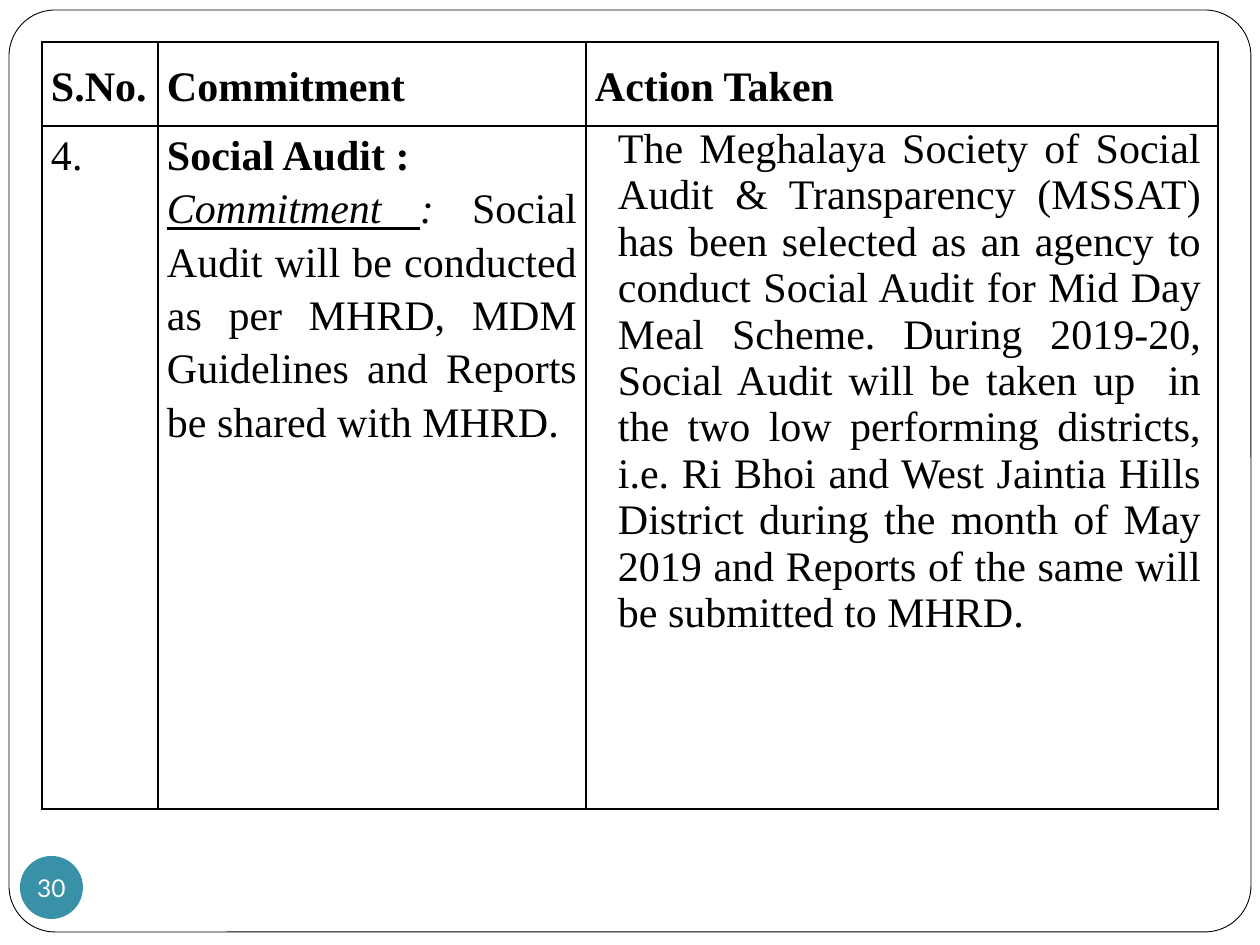
from dataclasses import dataclass

from lxml.etree import SubElement
from pptx import Presentation
from pptx.dml.color import RGBColor
from pptx.enum.shapes import MSO_SHAPE
from pptx.enum.text import MSO_ANCHOR, PP_ALIGN
from pptx.oxml.ns import qn
from pptx.util import Emu, Pt

BLACK = RGBColor(0x00, 0x00, 0x00)
WHITE = RGBColor(0xFF, 0xFF, 0xFF)
TEAL = RGBColor(0x38, 0x91, 0xA7)
SERIF = "Times New Roman"
COLS = (116, 428, 632)
ROWS = (84, 683)
PAD = 9


def px(n: int) -> Emu:
    return Emu(round(n * 914400 / 126))


@dataclass(frozen=True)
class Run:
    text: str
    italic: bool = False
    line: bool = False


@dataclass(frozen=True)
class Para:
    runs: tuple[Run, ...]
    bold: bool = False
    spacing: float = 1.15
    gap: int = 0
    indent: int = 0


@dataclass(frozen=True)
class Cell:
    paras: tuple[Para, ...]
    anchor: MSO_ANCHOR = MSO_ANCHOR.TOP
    right: int = PAD


def head(text: str) -> Cell:
    return Cell((Para((Run(text),), bold=True),), MSO_ANCHOR.MIDDLE)


ACTION = (
    "The Meghalaya Society of Social Audit & Transparency (MSSAT) has been "
    "selected as an agency to conduct Social Audit for Mid Day Meal Scheme. "
    "During 2019-20, Social Audit will be taken up  in the two low performing "
    "districts, i.e. Ri Bhoi and West Jaintia Hills District during the month "
    "of May 2019 and Reports of the same will be submitted to MHRD."
)
PLEDGE = (
    Run("Commitment ", italic=True, line=True),
    Run(": ", italic=True),
    Run("Social Audit will be conducted as per MHRD, MDM Guidelines and "
        "Reports be shared with MHRD."),
)
GRID = (
    (head("S.No."), head("Commitment"), head("Action Taken")),
    (
        Cell((Para((Run("4."),)),)),
        Cell((Para((Run("Social Audit :"),), bold=True), Para(PLEDGE))),
        Cell((Para((Run(ACTION),), spacing=1.0, gap=12, indent=23),), right=17),
    ),
)


def add_shape(slide, kind: MSO_SHAPE, box: tuple[int, ...], fill: RGBColor):
    shape = slide.shapes.add_shape(kind, *map(px, box))
    shape.shadow.inherit = False
    shape.fill.solid()
    shape.fill.fore_color.rgb = fill
    shape.line.fill.background()
    return shape


def add_frame(slide) -> None:
    frame = add_shape(slide, MSO_SHAPE.ROUNDED_RECTANGLE, (9, 10, 1242, 922), WHITE)
    frame.adjustments[0] = 0.05
    frame.line.color.rgb = BLACK
    frame.line.width = Pt(0.5)


def add_badge(slide, text: str) -> None:
    frame = add_shape(slide, MSO_SHAPE.OVAL, (20, 856, 63, 63), TEAL).text_frame
    frame.margin_left = frame.margin_right = 0
    frame.margin_top = frame.margin_bottom = 0
    frame.word_wrap = False
    frame.vertical_anchor = MSO_ANCHOR.MIDDLE
    para = frame.paragraphs[0]
    para.text = text
    para.alignment = PP_ALIGN.CENTER
    para.font.name, para.font.size = "Lato", Pt(14)
    para.font.color.rgb = WHITE


def add_lines(cell) -> None:
    props = cell._tc.get_or_add_tcPr()
    for side in ("lnL", "lnR", "lnT", "lnB"):
        line = SubElement(props, qn(f"a:{side}"), w=str(Pt(1)))
        fill = SubElement(line, qn("a:solidFill"))
        SubElement(fill, qn("a:srgbClr"), val=str(BLACK))


def fill_para(para, data: Para) -> None:
    para.alignment = PP_ALIGN.JUSTIFY
    para.line_spacing = data.spacing
    para.space_before = para.space_after = Pt(data.gap)
    if data.indent:
        props = para._p.get_or_add_pPr()
        props.set("marL", str(px(data.indent)))
        props.set("indent", "0")
    font = para.font
    font.name, font.size, font.bold = SERIF, Pt(24), data.bold
    font.color.rgb = BLACK
    for part in data.runs:
        run = para.add_run()
        run.text = part.text
        if part.italic:
            run.font.italic = True
        if part.line:
            run.font.underline = True


def fill_cell(cell, data: Cell) -> None:
    add_lines(cell)
    cell.fill.background()
    cell.vertical_anchor = data.anchor
    cell.margin_left, cell.margin_right = px(PAD), px(data.right)
    cell.margin_top = cell.margin_bottom = 0
    frame = cell.text_frame
    for i, item in enumerate(data.paras):
        fill_para(frame.add_paragraph() if i else frame.paragraphs[0], item)


def add_grid(slide) -> None:
    box = map(px, (42, 42, sum(COLS), sum(ROWS)))
    table = slide.shapes.add_table(len(ROWS), len(COLS), *box).table
    table.first_row = table.horz_banding = False
    for col, width in zip(table.columns, COLS):
        col.width = px(width)
    for row, height, cells in zip(table.rows, ROWS, GRID):
        row.height = px(height)
        for cell, data in zip(row.cells, cells):
            fill_cell(cell, data)


def main() -> None:
    deck = Presentation()
    deck.slide_width, deck.slide_height = px(1260), px(945)
    slide = deck.slides.add_slide(deck.slide_layouts[6])
    add_frame(slide)
    add_badge(slide, "30")
    add_grid(slide)
    deck.save("out.pptx")


if __name__ == "__main__":
    main()
